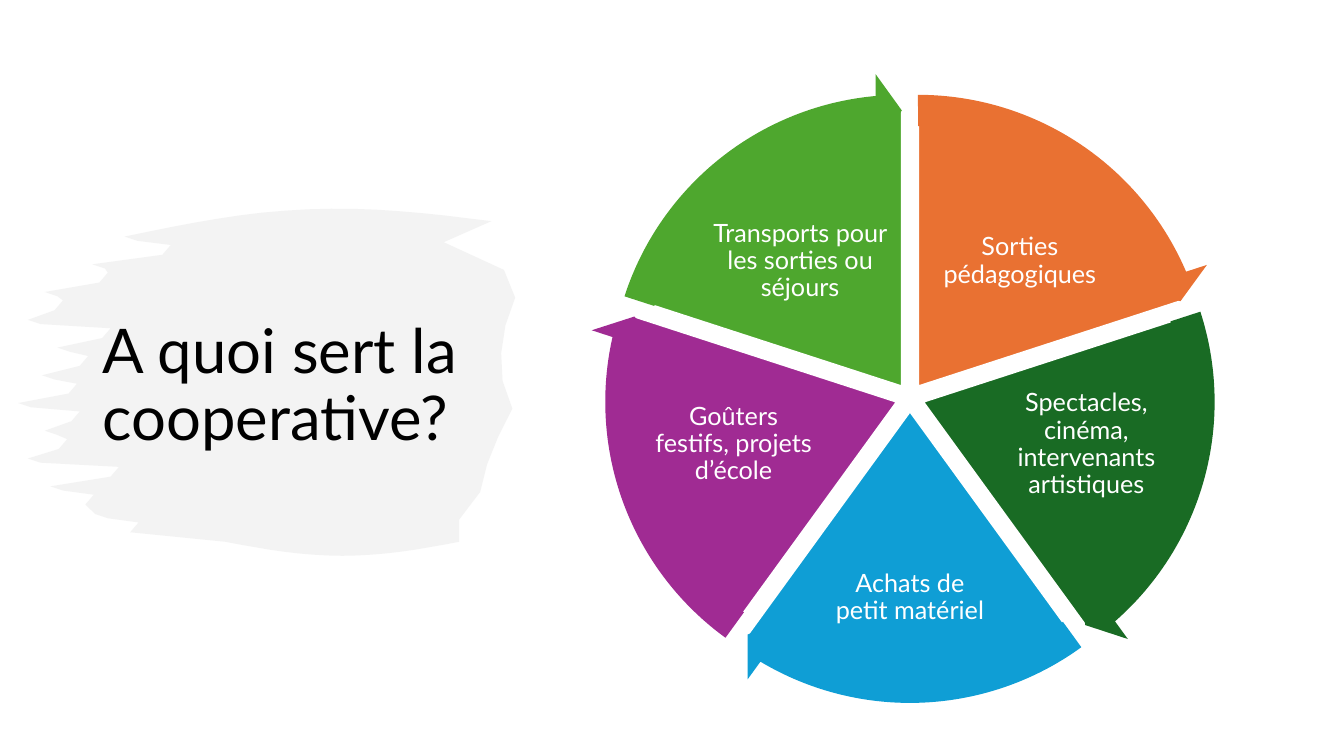
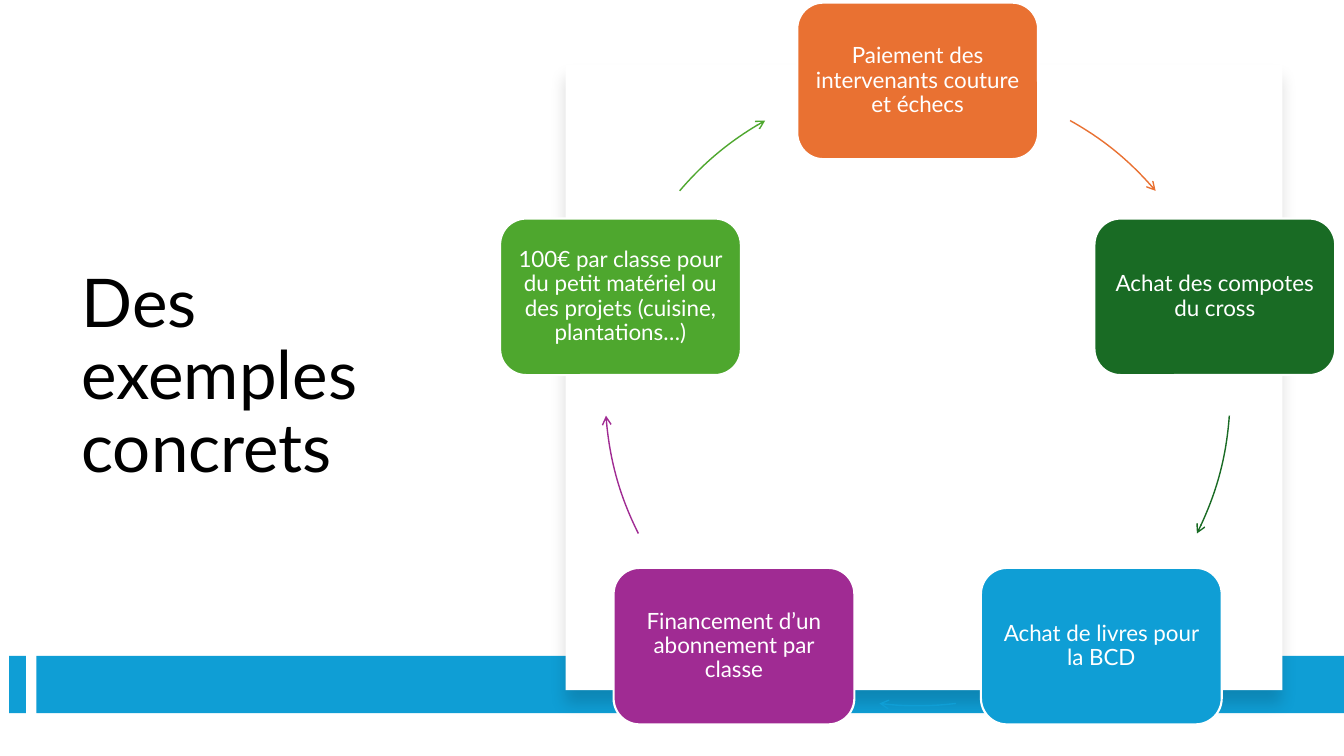
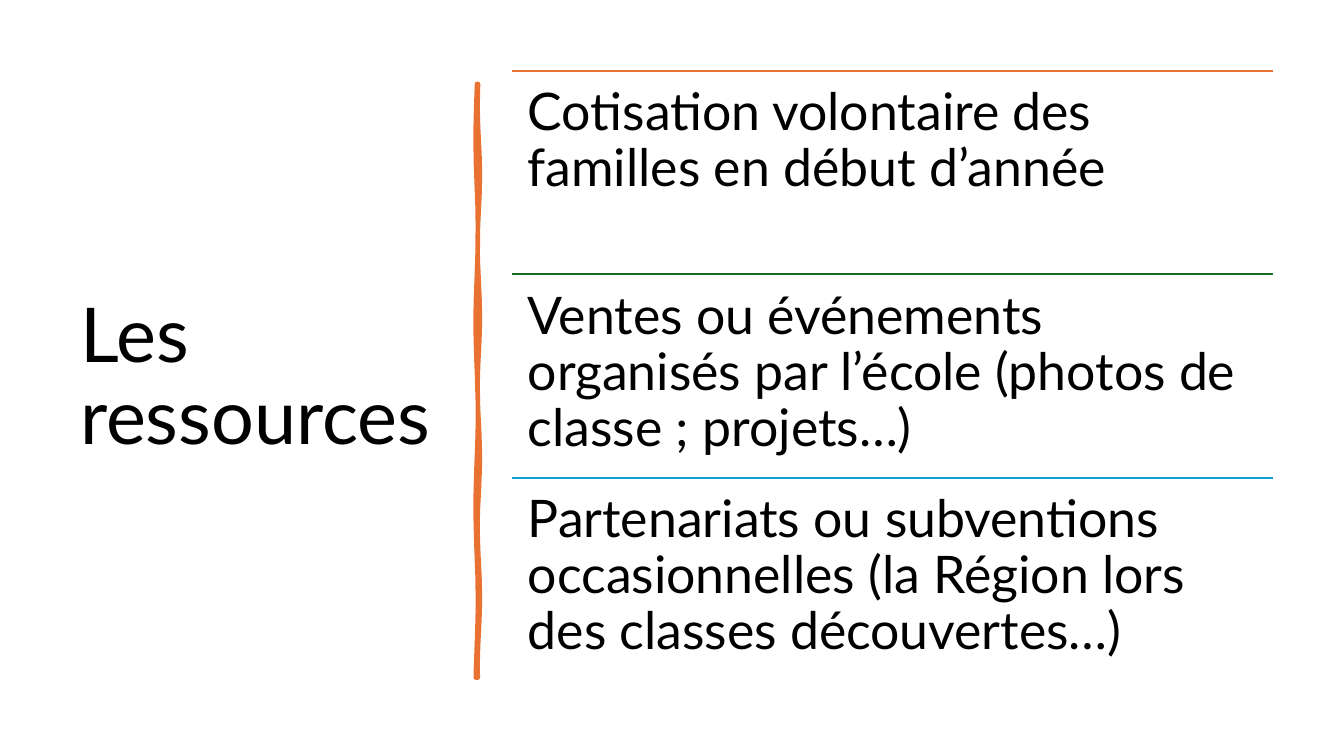
from math import cos, pi, radians, sin

from lxml.etree import SubElement
from pptx import Presentation
from pptx.dml.color import RGBColor
from pptx.enum.shapes import MSO_CONNECTOR as LINK, MSO_SHAPE as KIND
from pptx.enum.text import MSO_ANCHOR as ANCHOR, MSO_AUTO_SIZE as FIT, PP_ALIGN as ALIGN
from pptx.oxml.ns import qn
from pptx.util import Pt

FONT = "Lato"
BLACK = RGBColor(0x00, 0x00, 0x00)
WHITE = RGBColor(0xFF, 0xFF, 0xFF)
GREY = RGBColor(0xE8, 0xE8, 0xE8)
ORANGE = RGBColor(0xE9, 0x71, 0x32)
FOREST = RGBColor(0x19, 0x6B, 0x24)
BLUE = RGBColor(0x0F, 0x9E, 0xD5)
PURPLE = RGBColor(0xA0, 0x2B, 0x93)
GREEN = RGBColor(0x4E, 0xA7, 0x2E)
WHEEL = [ORANGE, FOREST, BLUE, PURPLE, GREEN]
TENTH = Pt(0.1)  # outlines are drawn in tenths of a point


def paint(shape, fill=None, edge=None, weight=1.5):
    shape.shadow.inherit = False
    if fill is None:
        shape.fill.background()
    else:
        shape.fill.solid()
        shape.fill.fore_color.rgb = fill
    if edge is None:
        shape.line.fill.background()
    else:
        shape.line.color.rgb = edge
        shape.line.width = Pt(weight)


def write(shape, text, size, color=WHITE, align=ALIGN.CENTER, anchor=ANCHOR.MIDDLE, inset=None):
    frame = shape.text_frame
    frame.word_wrap = True
    frame.auto_size = FIT.NONE
    frame.vertical_anchor = anchor
    if inset is not None:
        frame.margin_left = frame.margin_right = Pt(inset)
        frame.margin_top = frame.margin_bottom = Pt(inset)
    frame.text = text
    para = frame.paragraphs[0]
    para.alignment = align
    para.line_spacing = 0.9
    para.font.name = FONT
    para.font.size = Pt(size)
    para.font.color.rgb = color


deck = Presentation()
deck.slide_width, deck.slide_height = Pt(960), Pt(540)

TITLES = [
    ("A quoi sert la cooperative?", 44, (66, 118, 294, 317)),
    ("Des exemples concrets", 48, (51, 86.5, 299, 367)),
    ("Les ressources", 54, (50, 50.5, 269.5, 440)),
]
slides = []
for text, size, box in TITLES:
    slide = deck.slides.add_slide(deck.slide_layouts[5])
    title = slide.shapes.title
    title.left, title.top, title.width, title.height = map(Pt, box)
    write(title, text, size, BLACK, ALIGN.LEFT)
    slides.append(slide)

# Slide 1: brush mark, an arched top and bottom between two ragged sides
shapes = slides[0].shapes
TOP, BASE = 169, 387  # heights where the sides begin and end
TIPS = [89, 66, 32, 20, 41, 30, 13, 32, 20, 36, 68]  # left bristles, downwards
DIPS = [122, 77, 45, 79, 63, 55, 57, 48, 85, 67, 99]  # gap below each bristle
SIDE = [317, 360, 368, 361, 358, 359, 366, 356, 348, 343, 328]  # right side, downwards
LEAN, FOOT = 11, 161  # rise of the top to the right, left end of the bottom
ARCH = [i / 16 for i in range(17)]
drop, sag = (BASE - TOP) / len(TIPS), (BASE - TOP) / len(SIDE)
top = [(89 + 262 * t, TOP - LEAN * t - 14 * sin(pi * t)) for t in ARCH]
right = [(x, TOP + 4 + sag * i) for i, x in enumerate(SIDE)]
base = [(SIDE[-1] + (FOOT - SIDE[-1]) * t, BASE + 10 * sin(pi * t)) for t in ARCH]
left = []
for i, (tip, dip) in enumerate(zip(TIPS, DIPS)):
    y = TOP + drop * i
    left += [(tip, y), (tip + 9, y + 3), (dip, y + 6), (dip - 6, y + 13)]
mark = [(x * 10, y * 10) for x, y in top + right + base + left[::-1]]
pen = shapes.build_freeform(*mark[0], scale=TENTH)
pen.add_line_segments(mark[1:])
brush = pen.convert_to_shape()
paint(brush, GREY)
tint = brush.element.find(".//" + qn("a:srgbClr"))
SubElement(tint, qn("a:alpha"), val="50000")
shapes.title.element.addprevious(brush.element)

# Slide 1: wheel of five slices, each pushed out from the hub
HUBX, HUBY = 650, 284
USES = [  # text, then the label's centre from the hub, top, width and height
    ("Sorties pédagogiques", 78.5, 144, 129, 85.5),
    ("Spectacles, cinéma, intervenants artistiques", 126, 270, 119, 95),
    ("Achats de petit matériel", 0, 374.5, 114, 104.5),
    ("Goûters festifs, projets d’école", -126, 270, 119, 95),
    ("Transports pour les sorties ou séjours", -78.5, 144, 129, 85.5),
]
PIE, RING, PUSH = 398, 448, 9.8
FULL, STEP = 216, 43.2  # a whole turn and a fifth of it, in adjustment units
START, HEAD = 162, 201.92  # first slice's start and its arrowhead, same units
hubs = []
for i, ((text, shift, y_label, wide, high), color) in enumerate(zip(USES, WHEEL)):
    turn = radians(72 * i - 54)
    x, y = HUBX + PUSH * cos(turn), HUBY + PUSH * sin(turn)
    hubs.append((x, y))
    wedge = shapes.add_shape(KIND.PIE, Pt(x - PIE / 2), Pt(y - PIE / 2), Pt(PIE), Pt(PIE))
    wedge.adjustments[0] = (START + STEP * i) % FULL
    wedge.adjustments[1] = (START + STEP * (i + 1)) % FULL
    paint(wedge, color, WHITE)
    label = shapes.add_textbox(
        Pt(HUBX + shift - wide / 2), Pt(y_label), Pt(wide), Pt(high))
    write(label, text, 18, inset=2)
for i, ((x, y), color) in enumerate(zip(hubs, WHEEL)):
    arrow = shapes.add_shape(
        KIND.CIRCULAR_ARROW, Pt(x - RING / 2), Pt(y - RING / 2), Pt(RING), Pt(RING))
    bends = (0.05, 3.28, (HEAD + STEP * i) % FULL, (START + STEP * i) % FULL, 0.06)
    for j, bend in enumerate(bends):
        arrow.adjustments[j] = bend
    paint(arrow, color)

# Slide 2: band and raised panel
shapes = slides[1].shapes
for x, wide in ((6.5, 12), (26, 934)):
    bar = shapes.add_shape(KIND.RECTANGLE, Pt(x), Pt(468.5), Pt(wide), Pt(41))
    paint(bar, BLUE)
panel = shapes.add_shape(KIND.RECTANGLE, Pt(404), Pt(46), Pt(512), Pt(447))
paint(panel, WHITE)
glow = SubElement(
    panel.element.spPr.find(qn("a:effectLst")), qn("a:outerShdw"),
    blurRad=str(Pt(11)), dist=str(Pt(10)), dir="5400000", algn="t", rotWithShape="0")
shade = SubElement(glow, qn("a:srgbClr"), val=str(BLACK))
SubElement(shade, qn("a:alpha"), val="15000")

# Slide 2: cycle of five cards joined by arcs
CARDS = [  # text, then start and end of the arc that follows, in degrees
    ("Paiement des intervenants couture et échecs", 299.2, 319.6),
    ("Achat des compotes du cross", 4.1, 26.65),
    ("Achat de livres pour la BCD", 82.97, 97.03),
    ("Financement d’un abonnement par classe", 153.35, 175.9),
    ("100€ par classe pour du petit matériel ou des projets (cuisine, plantations…)",
     220.4, 240.8),
]
MIDX, MIDY, RAD = 655.5, 281, 223.2
WIDE, HIGH = 172, 111.8
for i, ((text, start, end), color) in enumerate(zip(CARDS, WHEEL)):
    turn = radians(72 * i - 90)
    x, y = MIDX + RAD * cos(turn), MIDY + RAD * sin(turn)
    card = shapes.add_shape(
        KIND.ROUNDED_RECTANGLE, Pt(x - WIDE / 2), Pt(y - HIGH / 2), Pt(WIDE), Pt(HIGH))
    paint(card, color, WHITE)
    write(card, text, 16, inset=5)
    arc = shapes.add_shape(KIND.ARC, Pt(MIDX - RAD), Pt(MIDY - RAD), Pt(2 * RAD), Pt(2 * RAD))
    arc.adjustments[0], arc.adjustments[1] = start * FULL / 360, end * FULL / 360
    paint(arc, edge=color, weight=1)
    SubElement(arc.element.spPr.find(qn("a:ln")), qn("a:tailEnd"), type="arrow")

# Slide 3: hand-drawn stroke, two edges that sway at different rates
shapes = slides[2].shapes
steps = range(60, 488, 8)
right = [(342 + 0.8 * sin(y / 16), y) for y in steps]
left = [(340.6 + 0.8 * sin(y / 21), y) for y in steps]
edge = [(x * 10, y * 10) for x, y in right + left[::-1]]
pen = shapes.build_freeform(*edge[0], scale=TENTH)
pen.add_line_segments(edge[1:])
paint(pen.convert_to_shape(), ORANGE, ORANGE, 3.25)

# Slide 3: ruled rows
FUNDS = [
    "Cotisation volontaire des familles en début d’année",
    "Ventes ou événements organisés par l’école (photos de classe ; projets…)",
    "Partenariats ou subventions occasionnelles (la Région lors des classes découvertes…)",
]
LEFT, SPAN, PITCH = 366, 543.5, 145.4
for i, (text, color) in enumerate(zip(FUNDS, WHEEL)):
    y = 50.5 + PITCH * i
    rule = shapes.add_connector(LINK.STRAIGHT, Pt(LEFT), Pt(y), Pt(LEFT + SPAN), Pt(y))
    rule.line.color.rgb = color
    rule.line.width = Pt(1.5)
    SubElement(rule.element.spPr, qn("a:effectLst"))
    row = shapes.add_textbox(Pt(LEFT), Pt(y), Pt(SPAN), Pt(PITCH))
    write(row, text, 37, BLACK, ALIGN.LEFT, ANCHOR.TOP, 11)

deck.save("out.pptx")
